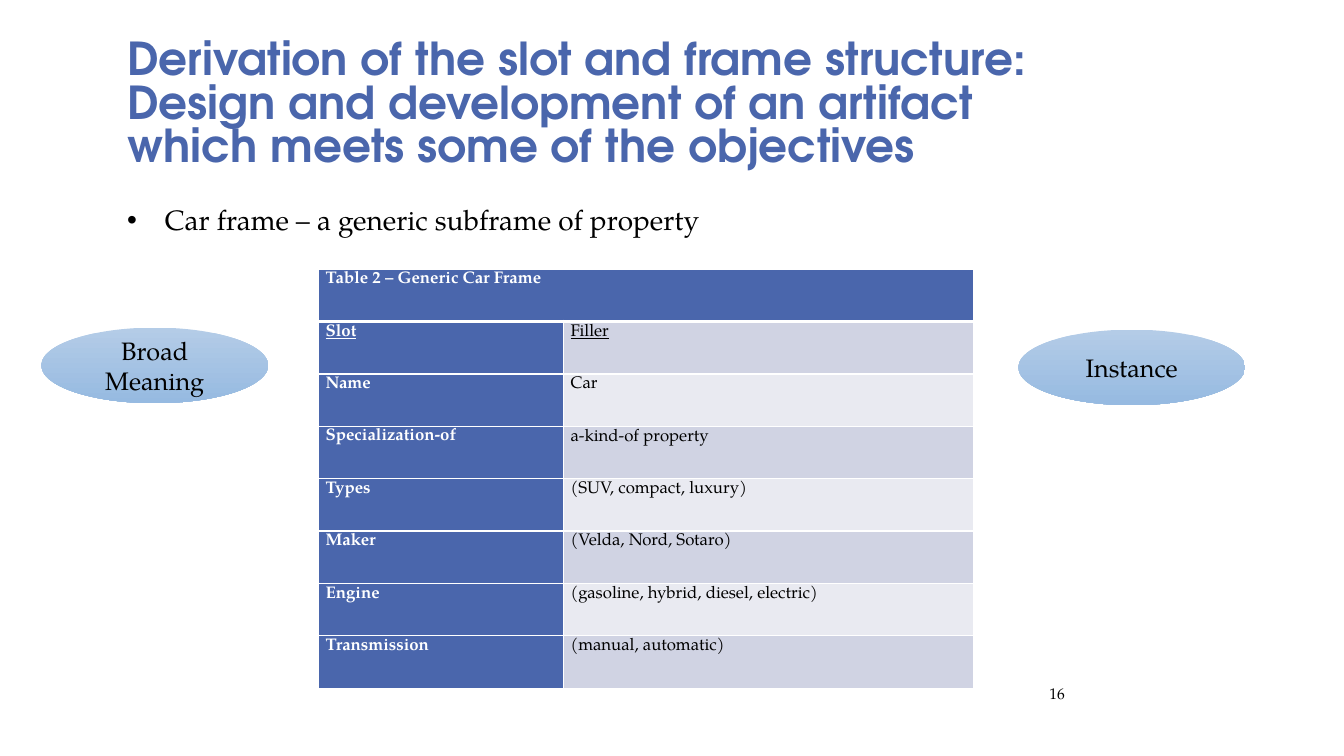
from dataclasses import dataclass
from typing import Any

from lxml import etree
from pptx import Presentation
from pptx.dml.color import RGBColor
from pptx.enum import shapes, text
from pptx.oxml import ns
from pptx.util import Inches, Pt


@dataclass(frozen=True)
class Theme:
    blue: str = "4A66AC"
    white: str = "FFFFFF"
    black: str = "000000"
    bullet: str = "595959"
    bands: tuple[str, str] = ("D0D3E3", "E9EAF1")
    oval: tuple[str, str] = ("B4CCE7", "96BAE1")
    heading: str = "TeX Gyre Adventor"
    serif: str = "TeX Gyre Pagella"
    title_size: float = 32.4
    body_size: float = 20
    label_size: float = 18
    cell_size: float = 12
    number_size: float = 11


@dataclass(frozen=True)
class Label:
    caption: str
    left: float
    top: float


@dataclass(frozen=True)
class Slot:
    name: str
    filler: str
    underline: bool = False


THEME = Theme()
LABELS = [Label("Broad Meaning", 0.41, 3.25), Label("Instance", 10.1, 3.27)]
TABLE_TITLE = "Table 2 – Generic Car Frame"
SLOTS = [
    Slot("Slot", "Filler", underline=True),
    Slot("Name", "Car"),
    Slot("Specialization-of", "a-kind-of property"),
    Slot("Types", "(SUV, compact, luxury)"),
    Slot("Maker", "(Velda, Nord, Sotaro)"),
    Slot("Engine", "(gasoline, hybrid, diesel, electric)"),
    Slot("Transmission", "(manual, automatic)"),
]
COLUMN_WIDTHS = (2.43, 4.07)
ROW_HEIGHT = 0.52


def set_attrs(target: Any, **values: Any) -> None:
    for name, value in values.items():
        setattr(target, name, value)


def place(sp: Any, left: float, top: float, width: float, height: float) -> None:
    set_attrs(sp, left=Inches(left), top=Inches(top),
              width=Inches(width), height=Inches(height))


def write(tf: Any, content: str, size: float, color: str = THEME.black,
          font: str = THEME.serif, bold: bool = False, underline: bool = False,
          **paragraph: Any) -> None:
    """Fill the first paragraph and format it and its runs."""
    tf.text = content
    p = tf.paragraphs[0]
    set_attrs(p, space_before=Pt(0), **paragraph)
    for r in p.runs:
        set_attrs(r.font, name=font, size=Pt(size), bold=bold, underline=underline)
        r.font.color.rgb = RGBColor.from_string(color)


def add_color(parent: Any, color: str) -> None:
    etree.SubElement(parent, ns.qn("a:srgbClr"), val=color)


def add_bullet(p: Any) -> None:
    pPr = p._p.get_or_add_pPr()
    pPr.set("marL", str(Inches(0.3)))
    pPr.set("indent", str(Inches(-0.25)))
    add_color(etree.SubElement(pPr, ns.qn("a:buClr")), THEME.bullet)
    etree.SubElement(pPr, ns.qn("a:buSzPct"), val="80000")
    etree.SubElement(pPr, ns.qn("a:buChar"), char="•")


def add_borders(cell: Any, top: float = 1, bottom: float = 1) -> None:
    tcPr = cell._tc.get_or_add_tcPr()
    for i, (side, width) in enumerate(dict(L=1, R=1, T=top, B=bottom).items()):
        ln = etree.Element(ns.qn(f"a:ln{side}"), w=str(Pt(width)))
        add_color(etree.SubElement(ln, ns.qn("a:solidFill")), THEME.white)
        tcPr.insert(i, ln)


def format_cell(cell: Any, fill: str, **borders: float) -> None:
    set_attrs(cell, margin_left=Inches(0.07), margin_right=Inches(0.07),
              margin_top=0, margin_bottom=0)
    cell.fill.solid()
    cell.fill.fore_color.rgb = RGBColor.from_string(fill)
    add_borders(cell, **borders)


def add_frame_table(slide: Any) -> None:
    rows = len(SLOTS) + 1
    table = slide.shapes.add_table(
        rows, len(COLUMN_WIDTHS), Inches(3.16), Inches(2.67),
        Inches(sum(COLUMN_WIDTHS)), Inches(ROW_HEIGHT * rows)).table
    set_attrs(table, first_row=False, horz_banding=False)
    for column, width in zip(table.columns, COLUMN_WIDTHS):
        column.width = Inches(width)
    for row in table.rows:
        row.height = Inches(ROW_HEIGHT)

    header = table.cell(0, 0)
    header.merge(table.cell(0, 1))
    for cell in table.rows[0].cells:
        format_cell(cell, THEME.blue, bottom=3)
    write(header.text_frame, TABLE_TITLE, THEME.cell_size, THEME.white,
          bold=True, line_spacing=1.15)

    for i, slot in enumerate(SLOTS):
        band = THEME.bands[i % 2]
        columns = [(slot.name, THEME.blue, THEME.white, True),
                   (slot.filler, band, THEME.black, False)]
        for j, (content, fill, color, bold) in enumerate(columns):
            cell = table.cell(i + 1, j)
            format_cell(cell, fill, top=3 if i == 0 else 1)
            write(cell.text_frame, content, THEME.cell_size, color, bold=bold,
                  underline=slot.underline, line_spacing=1.15)


def add_label(slide: Any, label: Label) -> None:
    sp = slide.shapes.add_shape(
        shapes.MSO_SHAPE.OVAL, Inches(label.left), Inches(label.top),
        Inches(2.25), Inches(0.75))
    sp.shadow.inherit = False
    sp.line.fill.background()
    sp.fill.gradient()
    sp.fill.gradient_angle = 270
    for stop, color in zip(sp.fill.gradient_stops, THEME.oval):
        stop.color.rgb = RGBColor.from_string(color)
    set_attrs(sp.text_frame, word_wrap=True, vertical_anchor=text.MSO_ANCHOR.MIDDLE)
    write(sp.text_frame, label.caption, THEME.label_size,
          alignment=text.PP_ALIGN.CENTER)


def add_title(slide: Any) -> None:
    title = slide.shapes.title
    place(title, 1.16, 0.58, 9.5, 1.17)
    set_attrs(title.text_frame, word_wrap=True, auto_size=text.MSO_AUTO_SIZE.NONE,
              vertical_anchor=text.MSO_ANCHOR.BOTTOM)
    write(title.text_frame,
          "Derivation of the slot and frame structure:\v"
          "Design and development of an artifact which meets some of the objectives",
          THEME.title_size, THEME.blue, THEME.heading, bold=True,
          line_spacing=0.8, alignment=text.PP_ALIGN.LEFT)


def add_body(slide: Any) -> None:
    body = slide.placeholders[1]
    place(body, 1.16, 2, 9.5, 4.58)
    add_bullet(body.text_frame.paragraphs[0])
    write(body.text_frame, "Car frame – a generic subframe of property",
          THEME.body_size, line_spacing=0.9)


def add_slide_number(slide: Any) -> None:
    box = slide.shapes.add_textbox(Inches(9.33), Inches(6.73), Inches(1.33), Inches(0.3))
    set_attrs(box.text_frame, word_wrap=True, vertical_anchor=text.MSO_ANCHOR.MIDDLE)
    write(box.text_frame, "16", THEME.number_size, alignment=text.PP_ALIGN.RIGHT)


def main() -> None:
    prs = Presentation()
    set_attrs(prs, slide_width=Inches(13.33), slide_height=Inches(7.5))
    slide = prs.slides.add_slide(prs.slide_layouts[1])
    add_title(slide)
    add_body(slide)
    add_slide_number(slide)
    add_frame_table(slide)
    for label in LABELS:
        add_label(slide, label)
    prs.save("out.pptx")


if __name__ == "__main__":
    main()
